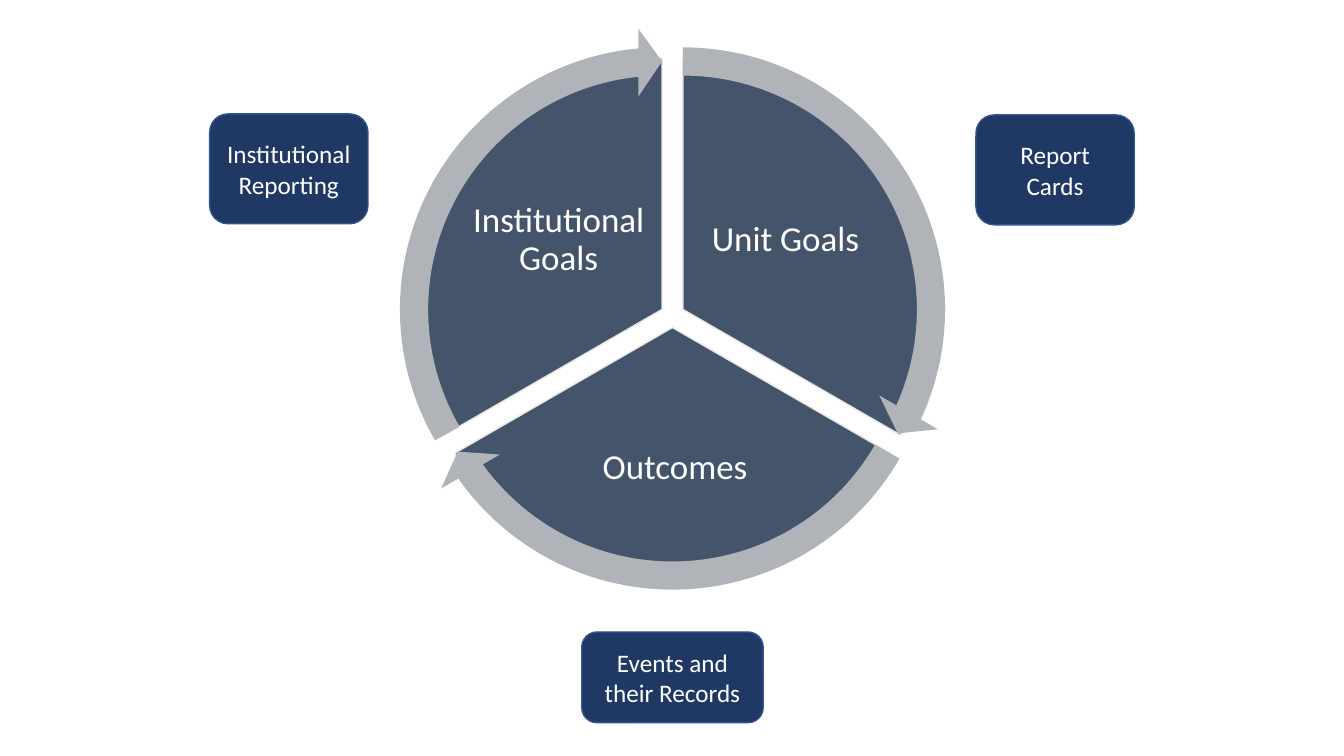
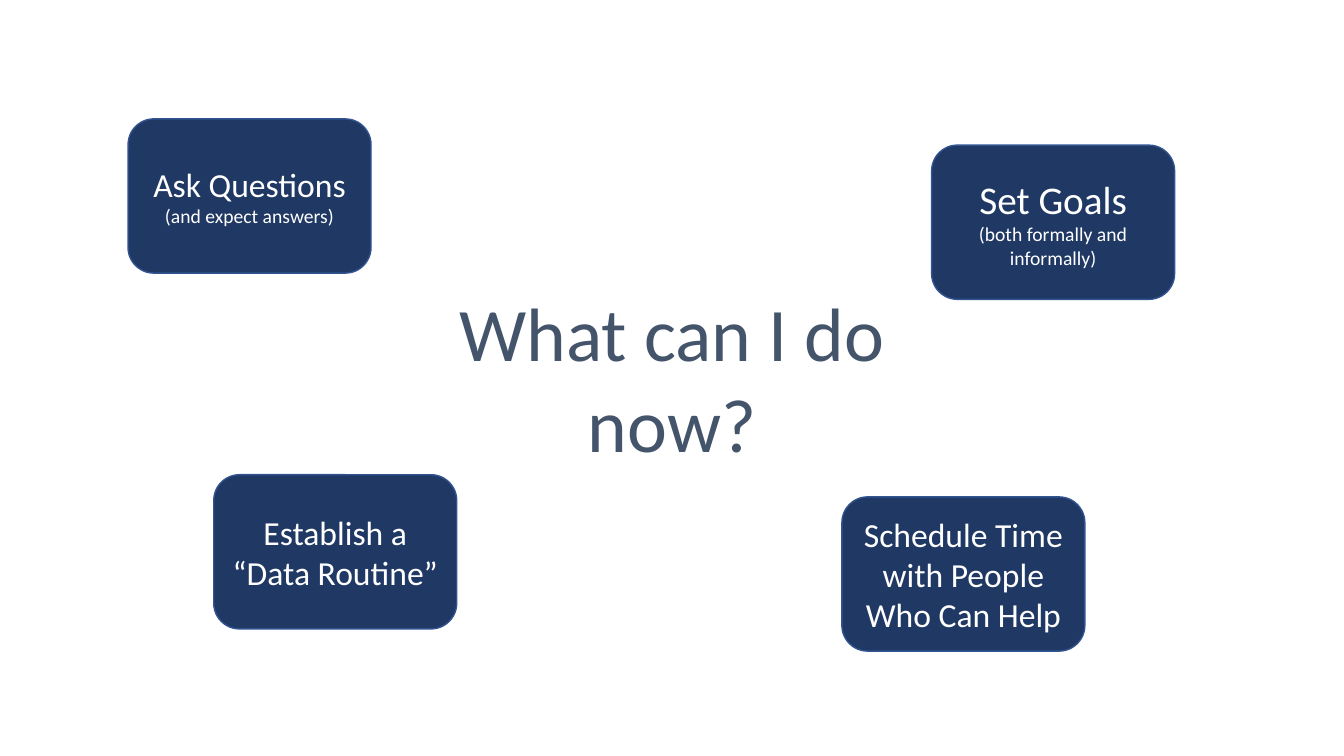
from math import cos, radians, sin

from pptx import Presentation
from pptx.dml.color import RGBColor
from pptx.enum.shapes import MSO_SHAPE
from pptx.enum.text import MSO_ANCHOR, MSO_AUTO_SIZE, PP_ALIGN
from pptx.util import Inches, Pt

PIE = MSO_SHAPE.PIE
ARROW = MSO_SHAPE.CIRCULAR_ARROW
ROUND = MSO_SHAPE.ROUNDED_RECTANGLE
CENTER = PP_ALIGN.CENTER
MIDDLE = MSO_ANCHOR.MIDDLE
TOP = MSO_ANCHOR.TOP
GROW = MSO_AUTO_SIZE.SHAPE_TO_FIT_TEXT

FONT = "Calibri"
COLORS = {
    "slate": "44546A", "edge": "E7E6E6", "ring": "B0B4B9",
    "navy": "203864", "rim": "325491", "white": "FFFFFF",
}

# Content: wheel parts clockwise from the top, with each label's box
WHEEL = [
    ("Unit Goals", (6.9, 1.64, 1.78, 1.48)),
    ("Outcomes", (5.36, 3.99, 2.67, 1.3)),
    ("Institutional Goals", (4.65, 1.64, 1.78, 1.48)),
]
HUB = (6.67, 3.13)
PUSH, DISC, RING = 0.12, 4.98, 5.59
SWEEP = 360 / len(WHEEL)
HEAD = 3.28  # share of the arc taken by an arrowhead
UNIT = 0.6   # adjustment value of one degree

# Content: cards as (box, [(text, size), ...])
CYCLE = [
    ((2.08, 1.13, 1.57, 1.09), [("Institutional Reporting", 18)]),
    ((9.68, 1.14, 1.57, 1.09), [("Report Cards", 18)]),
    ((5.77, 6.27, 1.8, 0.9), [("Events and their Records", 18)]),
]
CARD = (2.41, 1.53)
STEPS = [
    ((9.24, 1.44, *CARD), [("Set Goals", 28), ("(both formally and informally)", 14)]),
    ((1.27, 1.18, *CARD), [("Ask Questions", 24), ("(and expect answers)", 14)]),
    ((8.35, 4.93, *CARD), [("Schedule Time with People Who Can Help", 24)]),
    ((2.12, 4.71, *CARD), [("Establish a “Data Routine”", 24)]),
]
ASK = ((3.89, 2.79, 5.55, 1.92), [("What can I do now?", 54)])


def rgb(name):
    return RGBColor.from_string(COLORS[name])


def write(shape, lines, color="white", anchor=MIDDLE, gap=None):
    frame = shape.text_frame
    frame.word_wrap = True
    frame.vertical_anchor = anchor
    for i, (text, size) in enumerate(lines):
        para = frame.add_paragraph() if i else frame.paragraphs[0]
        para.alignment = CENTER
        if gap:
            para.line_spacing = gap
        run = para.add_run()
        run.text = text
        run.font.name = FONT
        run.font.size = Pt(size)
        run.font.color.rgb = rgb(color)
    return frame


def draw(slide, kind, box, fill, line=None, adjust=()):
    shape = slide.shapes.add_shape(kind, *map(Inches, box))
    shape.shadow.inherit = False
    shape.fill.solid()
    shape.fill.fore_color.rgb = rgb(fill)
    if line:
        shape.line.color.rgb = rgb(line)
        shape.line.width = Pt(1)
    else:
        shape.line.fill.background()
    for i, value in enumerate(adjust):
        shape.adjustments[i] = value
    return shape


def cards(slide, items):
    for box, lines in items:
        write(draw(slide, ROUND, box, "navy", "rim"), lines)


def label(slide, box, lines, **style):
    return write(slide.shapes.add_textbox(*map(Inches, box)), lines, **style)


def wheel(slide):
    rings = []
    for i, (text, box) in enumerate(WHEEL):
        start = (270 + i * SWEEP) % 360
        end = (start + SWEEP) % 360
        mid = radians(start + SWEEP / 2)
        x = HUB[0] + PUSH * cos(mid)
        y = HUB[1] + PUSH * sin(mid)
        first, last = start * UNIT, end * UNIT
        draw(slide, PIE, (x - DISC / 2, y - DISC / 2, DISC, DISC),
             "slate", "edge", (first, last))
        frame = label(slide, box, [(text, 25)], gap=0.9)
        frame.margin_left = frame.margin_right = Inches(0.03)
        frame.margin_top = frame.margin_bottom = Inches(0.03)
        rings.append(((x - RING / 2, y - RING / 2, RING, RING),
                      (0.05, HEAD, last - HEAD, first, 0.06)))
    # Arrows lie over all the slices
    for box, adjust in rings:
        draw(slide, ARROW, box, "ring", adjust=adjust)


def main():
    deck = Presentation()
    deck.slide_width, deck.slide_height = Inches(13.33), Inches(7.5)
    blank = deck.slide_layouts[6]

    # Goal cycle
    slide = deck.slides.add_slide(blank)
    wheel(slide)
    cards(slide, CYCLE)

    # Next steps
    slide = deck.slides.add_slide(blank)
    cards(slide, STEPS)
    label(slide, *ASK, color="slate", anchor=TOP).auto_size = GROW

    deck.save("out.pptx")


if __name__ == "__main__":
    main()
